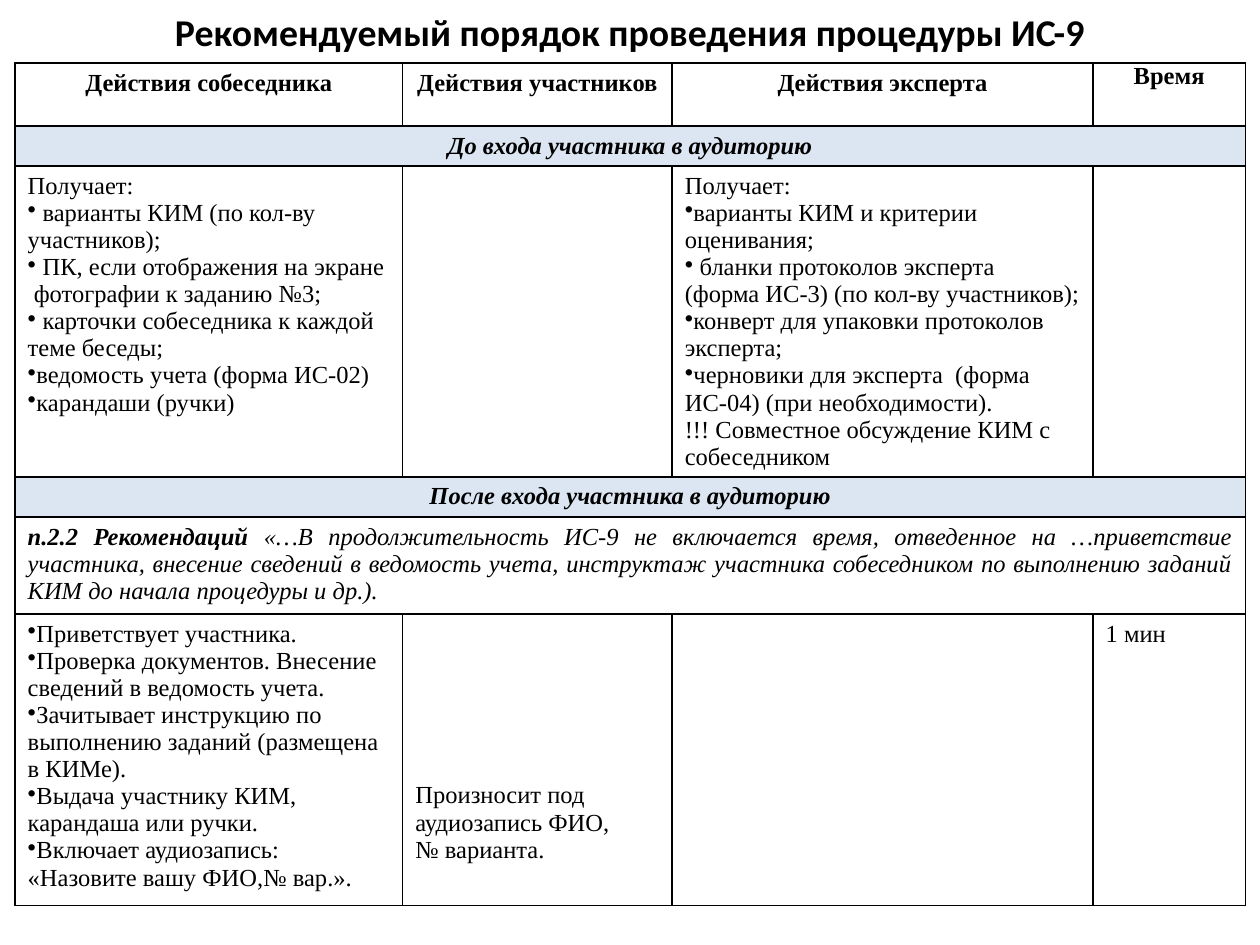
import pptx
import pptx.dml.color
import pptx.enum.text
import pptx.oxml
import pptx.oxml.ns
import pptx.util
from dataclasses import dataclass

Pt = pptx.util.Pt
ALIGN = pptx.enum.text.PP_ALIGN


@dataclass(frozen=True)
class Theme:
    title_font: str = "Calibri"
    body_font: str = "Times New Roman"
    title_size: float = 21.6
    body_size: float = 14
    ink: str = "000000"
    band: str = "DCE6F2"
    rule_width: float = 1


class ProcedureSlide:
    def __init__(self, deck, theme):
        self.theme = theme
        self.slide = deck.slides.add_slide(deck.slide_layouts[5])

    def add_text(self, paragraph, text, font, size, bold=False, italic=False):
        run = paragraph.add_run()
        run.text = text
        run.font.name = font
        run.font.size = Pt(size)
        run.font.bold = bold
        run.font.italic = italic
        run.font.color.rgb = pptx.dml.color.RGBColor.from_string(self.theme.ink)

    def title(self, text, left, top, width, height):
        heading = self.slide.shapes.title
        heading.left, heading.top = Pt(left), Pt(top)
        heading.width, heading.height = Pt(width), Pt(height)
        frame = heading.text_frame
        frame.auto_size = pptx.enum.text.MSO_AUTO_SIZE.NONE
        frame.vertical_anchor = pptx.enum.text.MSO_ANCHOR.MIDDLE
        frame.paragraphs[0].alignment = ALIGN.CENTER
        self.add_text(frame.paragraphs[0], text, self.theme.title_font,
                      self.theme.title_size, bold=True)

    def table(self, left, top, columns, rows):
        table = self.slide.shapes.add_table(
            len(rows), len(columns), Pt(left), Pt(top),
            Pt(sum(columns)), Pt(sum(rows))).table
        table.first_row = table.horz_banding = False
        for column, width in zip(table.columns, columns):
            column.width = Pt(width)
        for row, height in zip(table.rows, rows):
            row.height = Pt(height)
        for cell in table.iter_cells():
            cell.fill.background()
            self.borders(cell)
        return table

    def borders(self, cell):
        properties = cell._tc.get_or_add_tcPr()
        for position, side in enumerate("LRTB"):
            properties.insert(position, pptx.oxml.parse_xml(
                f'<a:ln{side} {pptx.oxml.ns.nsdecls("a")} w="{Pt(self.theme.rule_width)}">'
                f'<a:solidFill><a:srgbClr val="{self.theme.ink}"/></a:solidFill></a:ln{side}>'))

    def bullet(self, paragraph):
        properties = paragraph._p.get_or_add_pPr()
        properties.set("marL", "0")
        properties.set("indent", "0")
        properties.append(pptx.oxml.parse_xml(
            f'<a:buChar {pptx.oxml.ns.nsdecls("a")} char="•"/>'))

    def fill_cell(self, cell, lines, align=ALIGN.LEFT, bold=False, italic=False):
        """Each line is a paragraph; a leading • makes it a list item."""
        frame = cell.text_frame
        for index, line in enumerate(lines):
            paragraph = frame.paragraphs[0] if index == 0 else frame.add_paragraph()
            paragraph.alignment = align
            if line.startswith("•"):
                self.bullet(paragraph)
            self.add_text(paragraph, line.removeprefix("•"), self.theme.body_font,
                          self.theme.body_size, bold, italic)

    def wide_row(self, table, row):
        cell = table.cell(row, 0)
        cell.merge(table.cell(row, len(table.columns) - 1))
        return cell

    def band(self, table, row, text):
        cell = self.wide_row(table, row)
        cell.fill.solid()
        cell.fill.fore_color.rgb = pptx.dml.color.RGBColor.from_string(self.theme.band)
        self.fill_cell(cell, [text], ALIGN.CENTER, bold=True, italic=True)


HEADERS = ["Действия собеседника", "Действия участников", "Действия эксперта", "Время"]

BANDS = {1: "До входа участника в аудиторию", 3: "После входа участника в аудиторию"}

RULE_SOURCE = "п.2.2 Рекомендаций "
RULE_TEXT = ("«…В продолжительность ИС-9 не включается время, отведенное на "
             "…приветствие участника, внесение сведений в ведомость учета, "
             "инструктаж участника собеседником по выполнению заданий КИМ "
             "до начала процедуры и др.).")

# Cell contents by (row, column)
ACTIONS = {
    (2, 0): [
        "Получает:",
        "• варианты КИМ (по кол-ву участников);",
        "• ПК, если отображения на экране  фотографии к заданию №3;",
        "• карточки собеседника к каждой теме беседы;",
        "•ведомость учета (форма ИС-02)",
        "•карандаши (ручки)",
    ],
    (2, 2): [
        "Получает:",
        "•варианты КИМ и критерии оценивания;",
        "• бланки протоколов эксперта  (форма ИС-3) (по кол-ву участников);",
        "•конверт для упаковки протоколов эксперта;",
        "•черновики для эксперта  (форма ИС-04) (при необходимости).",
        "!!! Совместное обсуждение КИМ с собеседником",
    ],
    (5, 0): [
        "•Приветствует участника.",
        "•Проверка документов. Внесение сведений в ведомость учета.",
        "•Зачитывает инструкцию по выполнению заданий (размещена в КИМе).",
        "•Выдача участнику КИМ, карандаша или ручки.",
        "•Включает аудиозапись:",
        "«Назовите вашу ФИО,№ вар.».",
    ],
    (5, 1): ["Произносит под аудиозапись ФИО,", "№ варианта."],
    (5, 3): ["1 мин"],
}


def main():
    deck = pptx.Presentation()
    deck.slide_width, deck.slide_height = Pt(720), Pt(540)
    page = ProcedureSlide(deck, Theme())
    page.title("Рекомендуемый порядок проведения процедуры ИС-9", 36, 0, 648, 36)

    procedure = page.table(8.64, 36, columns=[221.5, 154, 240.5, 87],
                           rows=[36, 23, 174, 23, 55.5, 166.5])

    # Header row; the time heading sits flush with its cell
    for column, header in enumerate(HEADERS):
        page.fill_cell(procedure.cell(0, column), [header], ALIGN.CENTER, bold=True)
    time_header = procedure.cell(0, 3)
    time_header.margin_left = time_header.margin_right = 0
    time_header.margin_top = time_header.margin_bottom = 0

    # Stage bands
    for row, stage in BANDS.items():
        page.band(procedure, row, stage)

    # Quoted rule
    rule = page.wide_row(procedure, 4)
    page.fill_cell(rule, [RULE_SOURCE], ALIGN.JUSTIFY, bold=True, italic=True)
    page.add_text(rule.text_frame.paragraphs[0], RULE_TEXT, page.theme.body_font,
                  page.theme.body_size, italic=True)

    # Actions; the participant's reply lines up with the recording step
    for (row, column), lines in ACTIONS.items():
        page.fill_cell(procedure.cell(row, column), lines)
    procedure.cell(5, 1).margin_top = Pt(96)

    deck.save("out.pptx")


if __name__ == "__main__":
    main()
